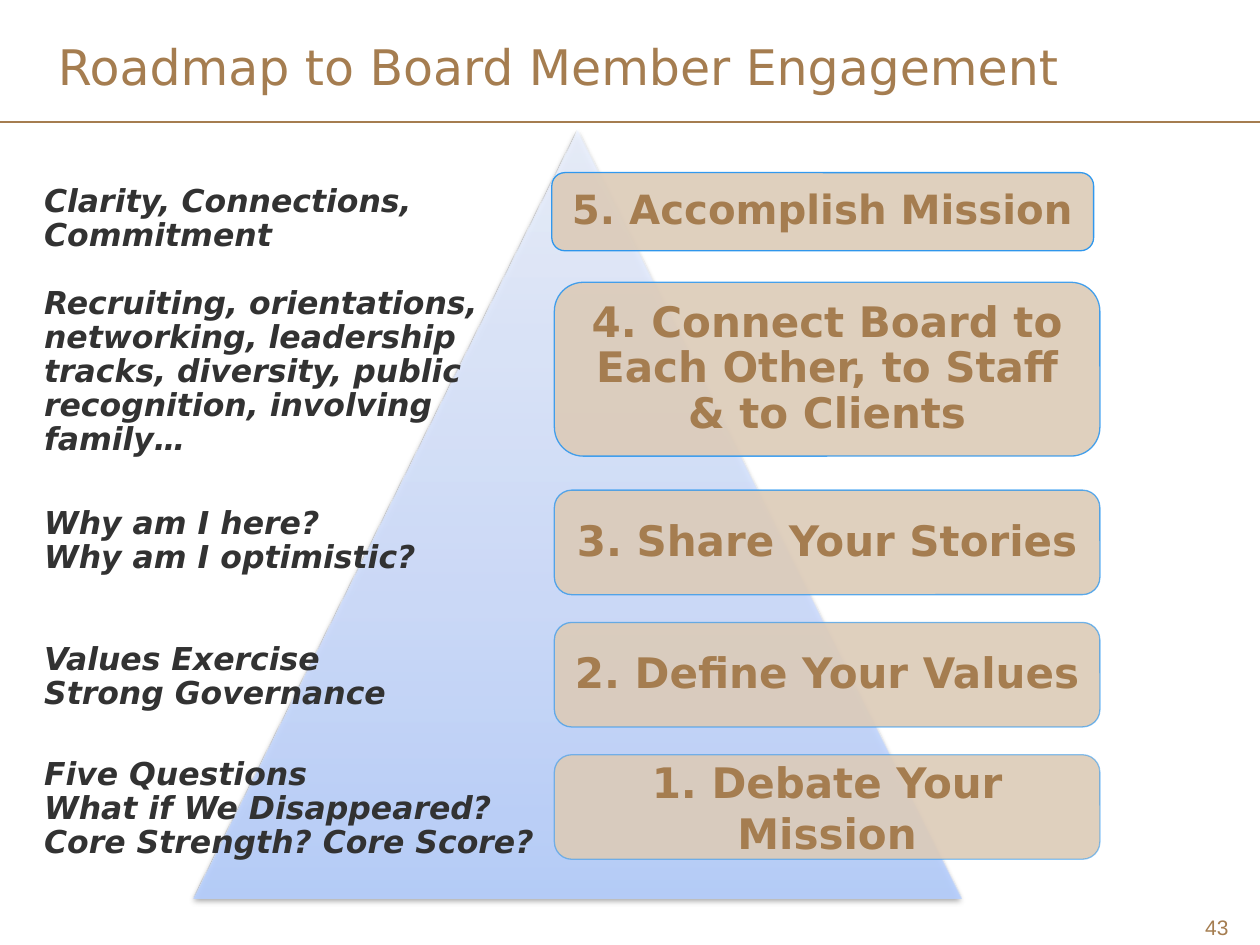
from dataclasses import dataclass

import lxml.etree
import pptx
import pptx.dml.color
import pptx.enum.shapes
import pptx.enum.text
import pptx.oxml
import pptx.oxml.ns
import pptx.util

Inches = pptx.util.Inches
Pt = pptx.util.Pt
qn = pptx.oxml.ns.qn
Shapes = pptx.enum.shapes.MSO_SHAPE
Align = pptx.enum.text.PP_ALIGN
Anchor = pptx.enum.text.MSO_ANCHOR


@dataclass(frozen=True)
class Theme:
    font: str = "DejaVu Sans"
    number_font: str = "Arial"
    accent: str = "A57D50"
    note: str = "323232"
    card: str = "DCCBB8"
    border: str = "1C90F0"
    pyramid: tuple = ((0, "B6CFFF"), (35, "CCDCFF"), (100, "ECF2FF"))
    opacity: int = 90
    title_size: int = 28
    card_size: int = 24
    note_size: int = 18
    number_size: int = 12
    line_spacing: float = 0.9


THEME = Theme()

# Text, top, height, type size, border opacity and line spacing of each step
STEPS = [
    ("5. Accomplish Mission", 1.37, 0.62, 23, 90, 0.9),
    ("4. Connect Board to Each Other, to Staff & to Clients", 2.24, 1.38, 24, 80, 0.9),
    ("3. Share Your Stories", 3.89, 0.83, 24, 70, 0.9),
    ("2. Define Your Values", 4.94, 0.83, 24, 60, 0.9),
    ("1. Debate Your Mission", 5.99, 0.83, 24, 50, 1.0),
]

# Space before in points, then the lines that belong together
UPPER_NOTES = [
    (0, ["Clarity, Connections, Commitment"]),
    (19.4, ["Recruiting, orientations, networking, leadership tracks, "
            "diversity, public recognition, involving family…"]),
    (28.5, ["Why am I here?", "Why am I optimistic?"]),
    (38.9, ["Values Exercise", "Strong Governance"]),
]
BASE_NOTES = [
    (0, ["Five Questions", "What if We Disappeared?", "Core Strength? Core Score?"]),
]


def rgb(value):
    return pptx.dml.color.RGBColor.from_string(value)


def style_font(paragraph, size, color, name=THEME.font, bold=False, italic=False):
    font = paragraph.font
    font.name, font.size = name, Pt(size)
    font.bold, font.italic = bold, italic
    font.color.rgb = rgb(color)


def set_opacity(color_parent, percent):
    color = next(color_parent.iter(qn("a:srgbClr")))
    lxml.etree.SubElement(color, qn("a:alpha")).set("val", str(percent * 1000))


def place(shape, box):
    shape.left, shape.top, shape.width, shape.height = (Inches(v) for v in box)


def add_header(slide, box):
    """Title with a full-width rule below it."""
    left, top, width, height = box
    rule = slide.shapes.add_connector(
        pptx.enum.shapes.MSO_CONNECTOR.STRAIGHT,
        Inches(0), Inches(top + 0.68), Inches(10), Inches(top + 0.68))
    rule.line.color.rgb = rgb(THEME.accent)
    rule.line.width = Pt(1)
    lxml.etree.SubElement(rule.element.spPr, qn("a:effectLst"))

    title = slide.shapes.title
    place(title, box)
    frame = title.text_frame
    frame.text = "Roadmap to Board Member Engagement"
    frame.auto_size = pptx.enum.text.MSO_AUTO_SIZE.NONE
    frame.vertical_anchor = Anchor.TOP
    heading = frame.paragraphs[0]
    heading.alignment = Align.LEFT
    heading.line_spacing = THEME.line_spacing
    style_font(heading, THEME.title_size, THEME.accent)


def add_pyramid(slide, box):
    """Translucent gradient triangle behind the steps."""
    pyramid = slide.shapes.add_shape(
        Shapes.ISOSCELES_TRIANGLE, *(Inches(v) for v in box))
    properties = pyramid.element.spPr
    namespace = pptx.oxml.ns.nsdecls("a")
    stops = "".join(
        f'<a:gs pos="{position * 1000}"><a:srgbClr val="{color}">'
        f'<a:alpha val="{THEME.opacity * 1000}"/></a:srgbClr></a:gs>'
        for position, color in THEME.pyramid)
    properties.append(pptx.oxml.parse_xml(
        f'<a:gradFill {namespace} rotWithShape="1"><a:gsLst>{stops}</a:gsLst>'
        '<a:lin ang="16200000" scaled="0"/></a:gradFill>'))
    pyramid.line.fill.background()
    properties.append(pptx.oxml.parse_xml(
        f'<a:effectLst {namespace}><a:outerShdw blurRad="40000" dist="20000" '
        'dir="5400000" rotWithShape="0"><a:srgbClr val="000000">'
        '<a:alpha val="38000"/></a:srgbClr></a:outerShdw></a:effectLst>'))


def add_step(slide, box, text, size, border_opacity, spacing):
    """Rounded card with one step of the roadmap."""
    card = slide.shapes.add_shape(
        Shapes.ROUNDED_RECTANGLE, *(Inches(v) for v in box))
    card.shadow.inherit = False
    card.fill.solid()
    card.fill.fore_color.rgb = rgb(THEME.card)
    set_opacity(card.element.spPr.find(qn("a:solidFill")), THEME.opacity)
    card.line.color.rgb = rgb(THEME.border)
    card.line.width = Pt(0.75)
    set_opacity(card.element.spPr.find(qn("a:ln")), border_opacity)

    frame = card.text_frame
    frame.text = text
    frame.word_wrap = True
    frame.vertical_anchor = Anchor.MIDDLE
    frame.margin_left = frame.margin_right = Inches(0.1)
    frame.margin_top = frame.margin_bottom = Inches(0.1)
    step = frame.paragraphs[0]
    step.alignment = Align.CENTER
    step.line_spacing = spacing
    style_font(step, size, THEME.accent, bold=True)


def add_steps(slide, left, width):
    for text, top, height, size, border_opacity, spacing in STEPS:
        # The top card is slightly narrower than the others
        inset = 0.02 if top == STEPS[0][1] else 0
        add_step(slide, (left - inset, top, width - 1.5 * inset, height),
                 text, size, border_opacity, spacing)


def add_notes(slide, placeholder, box, groups):
    """Grouped remarks beside the steps, in front of the pyramid."""
    place(placeholder, box)
    slide.shapes.element.append(placeholder.element)
    frame = placeholder.text_frame
    frame.word_wrap = True
    frame.auto_size = pptx.enum.text.MSO_AUTO_SIZE.NONE
    frame.vertical_anchor = Anchor.TOP
    lines = [(gap if index == 0 else 0, text)
             for gap, texts in groups for index, text in enumerate(texts)]
    for index, (gap, text) in enumerate(lines):
        note = frame.paragraphs[0] if index == 0 else frame.add_paragraph()
        note.text = text
        layout = note._p.get_or_add_pPr()
        layout.set("marL", "0")
        layout.set("indent", "0")
        lxml.etree.SubElement(layout, qn("a:buNone"))
        note.alignment = Align.LEFT
        note.line_spacing = THEME.line_spacing
        note.space_before = Pt(gap)
        style_font(note, THEME.note_size, THEME.note, bold=True, italic=True)


def add_page_number(slide, box):
    number_box = slide.shapes.add_textbox(*(Inches(v) for v in box))
    frame = number_box.text_frame
    frame.margin_left = frame.margin_right = 0
    frame.margin_top = frame.margin_bottom = 0
    frame.word_wrap = True
    frame.text = "43"
    number = frame.paragraphs[0]
    number.alignment = Align.RIGHT
    style_font(number, THEME.number_size, THEME.accent, THEME.number_font)


def main():
    deck = pptx.Presentation()
    deck.slide_width, deck.slide_height = Inches(10), Inches(7.5)
    slide = deck.slides.add_slide(deck.slide_layouts[3])
    upper, base = slide.placeholders[1], slide.placeholders[2]

    add_header(slide, (0.36, 0.29, 8.59, 0.84))
    add_pyramid(slide, (1.54, 1.04, 6.09, 6.09))
    add_steps(slide, 4.4, 4.33)
    add_notes(slide, base, (0.25, 5.97, 4.11, 0.92), BASE_NOTES)
    add_notes(slide, upper, (0.25, 1.42, 4.11, 4.46), UPPER_NOTES)
    add_page_number(slide, (9.29, 7.26, 0.46, 0.15))
    deck.save("out.pptx")


if __name__ == "__main__":
    main()
